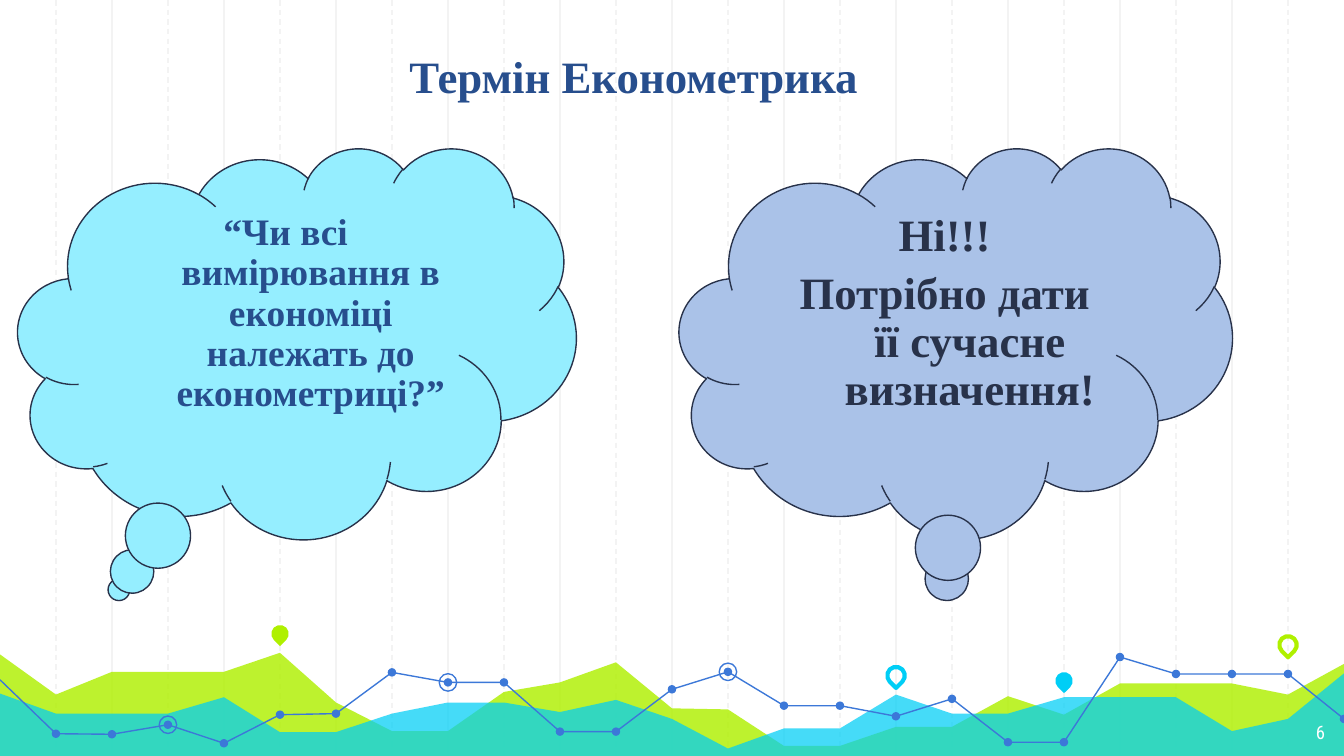
from dataclasses import dataclass
from typing import Optional

from lxml.etree import SubElement
from pptx import Presentation
from pptx.dml.color import RGBColor
from pptx.enum.dml import MSO_LINE
from pptx.enum.shapes import MSO_CONNECTOR, MSO_SHAPE
from pptx.enum.text import MSO_ANCHOR, PP_ALIGN
from pptx.oxml.ns import qn
from pptx.util import Cm, Pt

COLORS = {
    "grid": "F3F3F3", "lime": "AFF000", "cyan": "00CEF6", "blue": "3C78D8",
    "navy": "274E8D", "ink": "28324A", "white": "FFFFFF",
    "sky": "95EEFF", "periwinkle": "AAC2E8",
}
SERIF = "Times New Roman"
WIDTH, HEIGHT = 25.4, 14.29
COLUMNS = 24
STEP = WIDTH / COLUMNS
BOTTOM = 14.34


@dataclass
class Area:
    color: str
    opacity: int
    heights: dict[int, float]  # grid column -> y in cm


@dataclass
class Pin:
    column: int
    y: float
    color: str
    filled: bool


@dataclass
class Cloud:
    left: float
    width: float
    tail: tuple[float, float]
    fill: str
    text_color: str
    size: int
    text: str


AREAS = [
    Area("lime", 82, {
        0: 12.37, 1: 13.13, 2: 12.7, 4: 12.7, 5: 12.34, 6: 13.28, 7: 13.82, 8: 13.82,
        9: 13.08, 10: 12.9, 11: 12.52, 12: 13.39, 13: 13.41, 14: 14.1, 15: 14.1,
        16: 13.74, 17: 13.74, 18: 13.16, 19: 13.51, 20: 12.92, 22: 12.92, 23: 13.13,
        24: 12.55}),
    Area("cyan", 73, {
        0: 13.11, 1: 13.49, 3: 13.49, 4: 13.18, 5: 13.84, 6: 13.84, 7: 13.49, 8: 13.28,
        9: 13.28, 10: 13.46, 11: 13.23, 12: 13.59, 13: 14.15, 14: 13.77, 15: 13.77,
        16: 13.13, 17: 13.49, 18: 13.49, 19: 13.18, 21: 13.18, 22: 13.82, 23: 13.59,
        24: 12.73}),
]
TREND = [12.85, 13.87, 13.88, 13.7, 14.05, 13.51, 13.49, 12.71, 12.9, 12.9, 13.83, 13.83,
         13.03, 12.7, 13.34, 13.34, 13.54, 13.21, 14.03, 14.03, 12.42, 12.74, 12.74, 12.74,
         13.59]
TREND_SECTIONS = [(0, 11), (11, 20), (20, 24)]
RINGED_COLUMNS = [3, 8, 13]
PINS = [
    Pin(5, 11.98, "lime", True),
    Pin(16, 12.77, "cyan", False),
    Pin(19, 12.87, "cyan", True),
    Pin(23, 12.19, "lime", False),
]
CLOUDS = [
    Cloud(0.34, 10.55, (-0.319, 0.631), "sky", "navy", 20,
          "“Чи всі вимірювання в економіці належать до економетриці?”"),
    Cloud(12.84, 10.45, (-0.017, 0.627), "periwinkle", "ink", 24,
          "Ні!!!\nПотрібно дати її сучасне визначення!"),
]


def rgb(name: str) -> RGBColor:
    return RGBColor.from_string(COLORS[name])


def paint(shape, fill: Optional[str] = None, line: Optional[str] = None,
          weight: float = 0.75) -> None:
    shape.shadow.inherit = False
    if fill:
        shape.fill.solid()
        shape.fill.fore_color.rgb = rgb(fill)
    else:
        shape.fill.background()
    if line:
        shape.line.color.rgb = rgb(line)
        shape.line.width = Pt(weight)
    else:
        shape.line.fill.background()


def format_text(frame, font: str, size: float, color: str, alignment, bold: bool) -> None:
    for paragraph in frame.paragraphs:
        paragraph.alignment = alignment
        for span in paragraph.runs:
            span.font.name = font
            span.font.size = Pt(size)
            span.font.bold = bold
            span.font.color.rgb = rgb(color)


def add_grid_line(page, column: int) -> None:
    x = Cm(column * STEP)
    line = page.shapes.add_connector(MSO_CONNECTOR.STRAIGHT, x, 0, x, Cm(BOTTOM))
    line.line.color.rgb = rgb("grid")
    line.line.width = Pt(0.75)
    if column % 2:
        line.line.dash_style = MSO_LINE.DASH
    SubElement(line._element.spPr, qn("a:effectLst"))


def add_path(page, points: list[tuple[float, float]], close: bool):
    """Draw straight segments through points given as (grid column, y in cm)."""
    vertices = [(Cm(column * STEP), Cm(y)) for column, y in points]
    builder = page.shapes.build_freeform(*vertices[0])
    builder.add_line_segments(vertices[1:], close=close)
    return builder.convert_to_shape()


def add_area(page, area: Area) -> None:
    corners = [(COLUMNS, BOTTOM), (0, BOTTOM)]
    shape = add_path(page, list(area.heights.items()) + corners, True)
    paint(shape, fill=area.color)
    color = shape._element.spPr.find(qn("a:solidFill")).find(qn("a:srgbClr"))
    SubElement(color, qn("a:alpha")).set("val", str(area.opacity * 1000))


def add_marker(page, kind, column: int, y: float, size: float):
    """Add a square-framed shape centred on a grid column."""
    return page.shapes.add_shape(
        kind, Cm(column * STEP - size / 2), Cm(y - size / 2), Cm(size), Cm(size))


def add_pin(page, pin: Pin) -> None:
    shape = add_marker(page, MSO_SHAPE.TEAR, pin.column, pin.y, 0.33)
    shape.rotation = 135
    if pin.filled:
        paint(shape, fill=pin.color)
    else:
        paint(shape, line=pin.color, weight=2.25)


def add_trend(page) -> None:
    for first, last in TREND_SECTIONS:
        points = [(column, TREND[column]) for column in range(first, last + 1)]
        paint(add_path(page, points, False), line="blue")
    for column, y in enumerate(TREND[1:], start=1):
        paint(add_marker(page, MSO_SHAPE.OVAL, column, y, 0.16), fill="blue")
    for column in RINGED_COLUMNS:
        paint(add_marker(page, MSO_SHAPE.OVAL, column, TREND[column], 0.33), line="blue")


def add_label(page, left: float, top: float, width: float, height: float, text: str):
    box = page.shapes.add_textbox(Cm(left), Cm(top), Cm(width), Cm(height))
    frame = box.text_frame
    frame.word_wrap = True
    frame.margin_top = frame.margin_bottom = Cm(0.25)
    frame.text = text
    return frame


def add_cloud(page, cloud: Cloud) -> None:
    shape = page.shapes.add_shape(
        MSO_SHAPE.CLOUD_CALLOUT, Cm(cloud.left), Cm(2.79), Cm(cloud.width), Cm(7.39))
    shape.adjustments[0], shape.adjustments[1] = cloud.tail
    paint(shape, fill=cloud.fill, line="ink")
    frame = shape.text_frame
    frame.word_wrap = True
    frame.vertical_anchor = MSO_ANCHOR.TOP
    frame.text = cloud.text
    format_text(frame, SERIF, cloud.size, cloud.text_color, PP_ALIGN.CENTER, True)
    for paragraph in frame.paragraphs:
        paragraph.line_spacing = 0.9
        paragraph.space_before = Pt(cloud.size * 0.2)
        properties = paragraph._p.get_or_add_pPr()
        properties.set("marL", str(Cm(1.27)))
        properties.set("indent", str(Cm(-0.95)))


def main() -> None:
    deck = Presentation()
    deck.slide_width, deck.slide_height = Cm(WIDTH), Cm(HEIGHT)
    page = deck.slides.add_slide(deck.slide_layouts[6])
    for column in range(1, COLUMNS):
        add_grid_line(page, column)
    for area in AREAS:
        add_area(page, area)
    add_trend(page)
    for pin in PINS:
        add_pin(page, pin)
    title = add_label(page, 2.26, 0.2, 19.43, 1.98, "Термін Економетрика")
    title.vertical_anchor = MSO_ANCHOR.BOTTOM
    format_text(title, SERIF, 24, "navy", PP_ALIGN.CENTER, True)
    number = add_label(page, 23.77, 13.41, 1.52, 0.89, "6")
    format_text(number, "Roboto Condensed", 10, "white", PP_ALIGN.RIGHT, False)
    for cloud in CLOUDS:
        add_cloud(page, cloud)
    deck.save("out.pptx")


if __name__ == "__main__":
    main()
